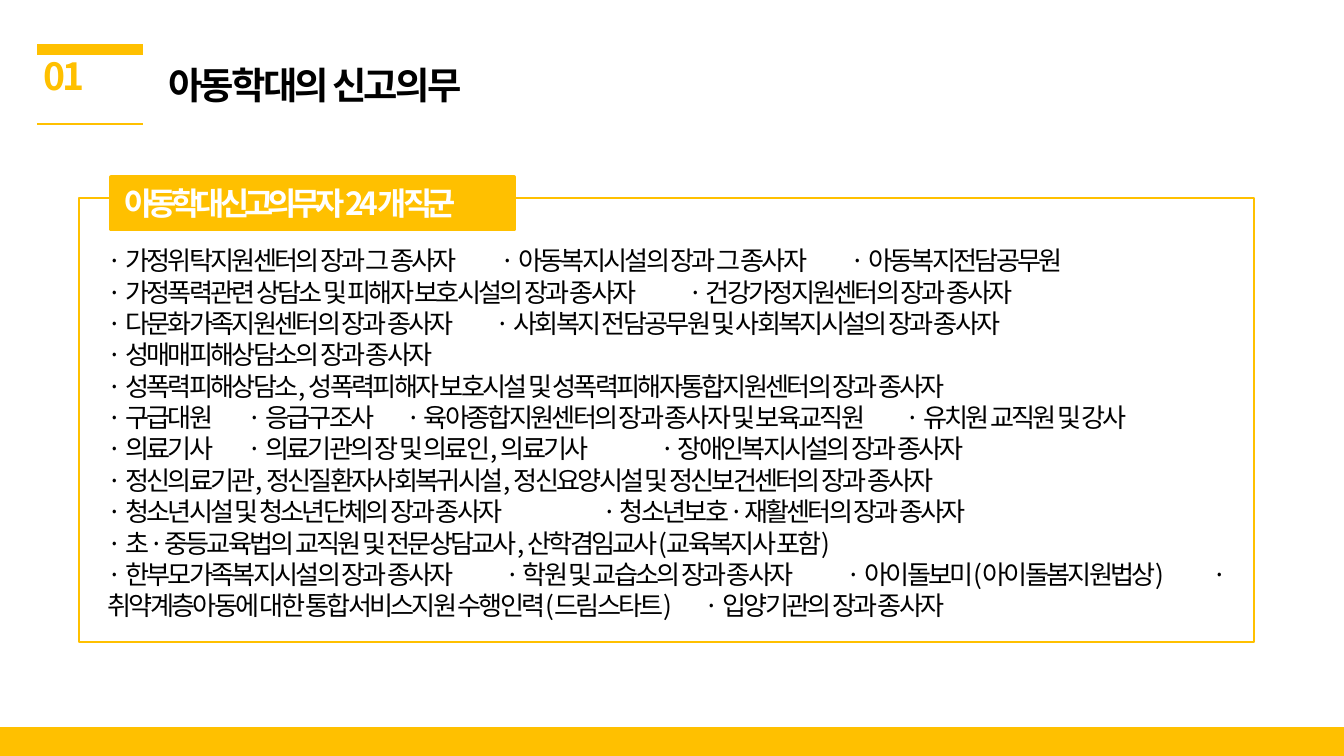
from pptx import Presentation
from pptx.dml.color import RGBColor
from pptx.enum.shapes import MSO_CONNECTOR, MSO_SHAPE
from pptx.enum.text import MSO_ANCHOR, PP_ALIGN
from pptx.oxml.ns import qn
from pptx.util import Pt
from lxml import etree

RECT, LINE = MSO_SHAPE.RECTANGLE, MSO_CONNECTOR.STRAIGHT
TOP, LEFT, CENTER = MSO_ANCHOR.TOP, PP_ALIGN.LEFT, PP_ALIGN.CENTER
GOLD = RGBColor(0xFF, 0xC0, 0x00)
WHITE = RGBColor(0xFF, 0xFF, 0xFF)
BLACK = RGBColor(0, 0, 0)
FONT = "Noto Sans CJK KR"

TITLE = "아동학대의 신고의무"
NUMBER = "01"
LABEL = "아동학대 신고의무자 24개 직군"

# Each row: its jobs, then the tab stops where the later jobs start
ROWS = [
    (["가정위탁지원센터의 장과 그 종사자", "아동복지시설의 장과 그 종사자",
      "아동복지전담공무원"], [210.5, 398]),
    (["가정폭력관련 상담소 및 피해자 보호시설의 장과 종사자",
      "건강가정지원센터의 장과 종사자"], [311]),
    (["다문화가족지원센터의 장과 종사자",
      "사회복지 전담공무원 및 사회복지시설의 장과 종사자"], [208]),
    (["성매매피해상담소의 장과 종사자"], []),
    (["성폭력피해상담소, 성폭력피해자 보호시설 및 성폭력피해자통합지원센터의 장과 종사자"], []),
    (["구급대원", "응급구조사", "육아종합지원센터의 장과 종사자 및 보육교직원",
      "유치원 교직원 및 강사"], [75, 160, 427.5]),
    (["의료기사", "의료기관의 장 및 의료인, 의료기사",
      "장애인복지시설의 장과 종사자"], [75, 296]),
    (["정신의료기관, 정신질환자사회복귀시설, 정신요양시설 및 정신보건센터의 장과 종사자"], []),
    (["청소년시설 및 청소년단체의 장과 종사자",
      "청소년보호·재활센터의 장과 종사자"], [265]),
    (["초·중등교육법의 교직원 및 전문상담교사, 산학겸임교사(교육복지사 포함)"], []),
    (["한부모가족복지시설의 장과 종사자", "학원 및 교습소의 장과 종사자",
      "아이돌보미(아이돌봄지원법상)", "취약계층아동에 대한 통합서비스지원 수행인력(드림스타트)",
      "입양기관의 장과 종사자"], [213, 320, 396, 592]),
]

deck = Presentation()
deck.slide_width, deck.slide_height = Pt(720), Pt(405)
slide = deck.slides.add_slide(deck.slide_layouts[5])
shapes = slide.shapes


def add_rule(y, width):
    rule = shapes.add_connector(LINE, Pt(20), Pt(y), Pt(76.5), Pt(y))
    rule.line.color.rgb, rule.line.width = GOLD, Pt(width)
    etree.SubElement(rule._element.spPr, qn("a:effectLst"))


def add_rect(box, fill, width):
    rect = shapes.add_shape(RECT, *map(Pt, box))
    rect.shadow.inherit = False
    if fill:
        rect.fill.solid()
        rect.fill.fore_color.rgb = fill
    else:
        rect.fill.background()
    if width:
        rect.line.color.rgb, rect.line.width = GOLD, Pt(width)
    else:
        rect.line.fill.background()


def add_tabs(para, stops):
    tabs = etree.SubElement(para._p.get_or_add_pPr(), qn("a:tabLst"))
    for stop in stops:
        etree.SubElement(tabs, qn("a:tab"), pos=str(Pt(stop)), algn="l")


def write(shape, box, lines, size, color, bold=True, gap=-1.5, align=LEFT):
    """Place a text shape and fill it; lines are (text, tab stops) pairs."""
    shape.left, shape.top, shape.width, shape.height = map(Pt, box)
    frame = shape.text_frame
    frame.word_wrap, frame.vertical_anchor = True, TOP
    frame.text = "\n".join(text for text, stops in lines)
    look = {"size": Pt(size), "bold": bold, "name": FONT}
    for para, (text, stops) in zip(frame.paragraphs, lines):
        para.alignment = align
        if stops:
            add_tabs(para, stops)
        for run in para.runs:
            for key, value in look.items():
                setattr(run.font, key, value)
            run.font.color.rgb = color
            props = run._r.get_or_add_rPr()
            props.set("spc", str(int(gap * 100)))
            etree.SubElement(props, qn("a:ea"), typeface=FONT)


def add_text(*args, **look):
    write(shapes.add_textbox(0, 0, 0, 0), *args, **look)


add_rule(26.5, 6)
add_rule(66.5, 1)
add_rect((0, 389.5, 720, 15.5), GOLD, 0)
add_text((3, 25, 62.5, 31.5), [(NUMBER, [])], 20, GOLD, align=CENTER)
add_rect((42.5, 106, 629.5, 238), None, 1)
add_rect((59.5, 95, 216, 28), GOLD, 2)
add_text((59.5, 95, 211, 28), [(LABEL, [])], 17, WHITE, gap=-3)
lines = [("\t".join("· " + job for job in jobs), stops) for jobs, stops in ROWS]
add_text((50.5, 127.5, 615.5, 211), lines, 14, BLACK, bold=False)
write(shapes.title, (83, 29.5, 516, 31.5), [(TITLE, [])], 20, BLACK)

deck.save("out.pptx")
